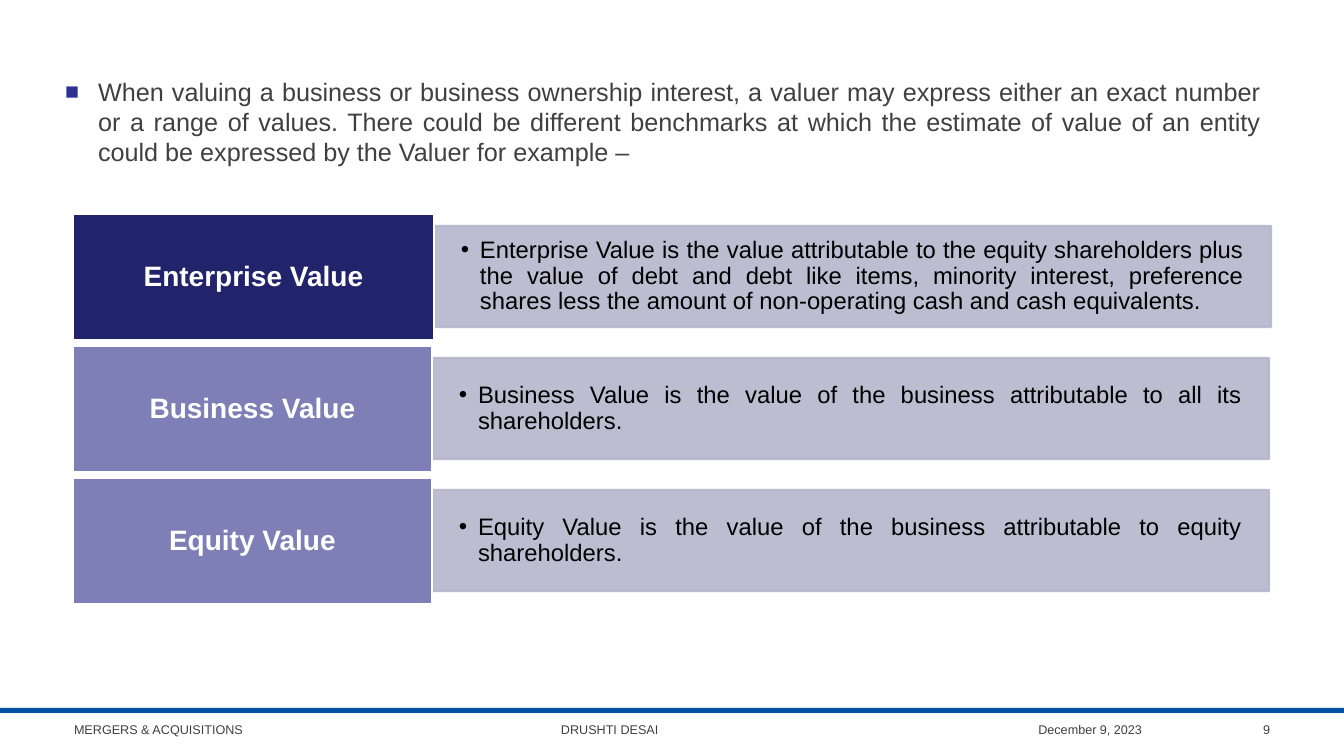
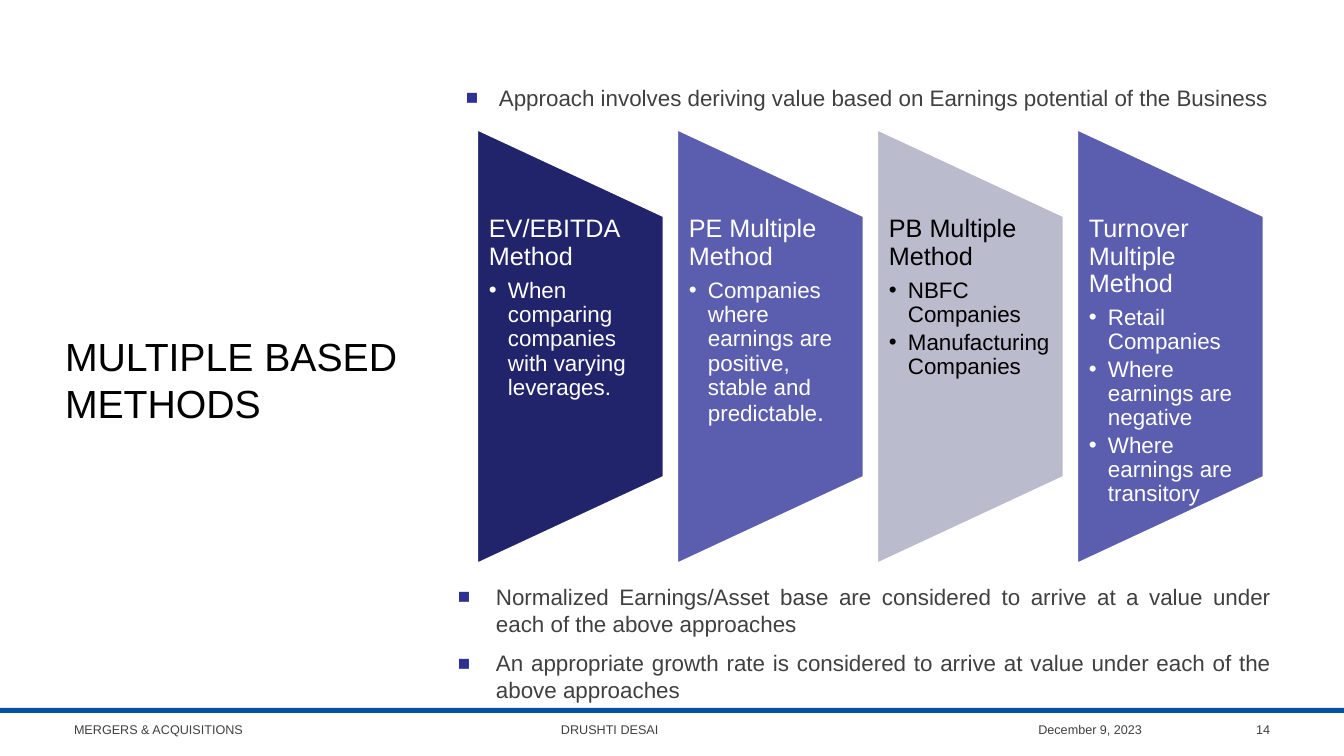
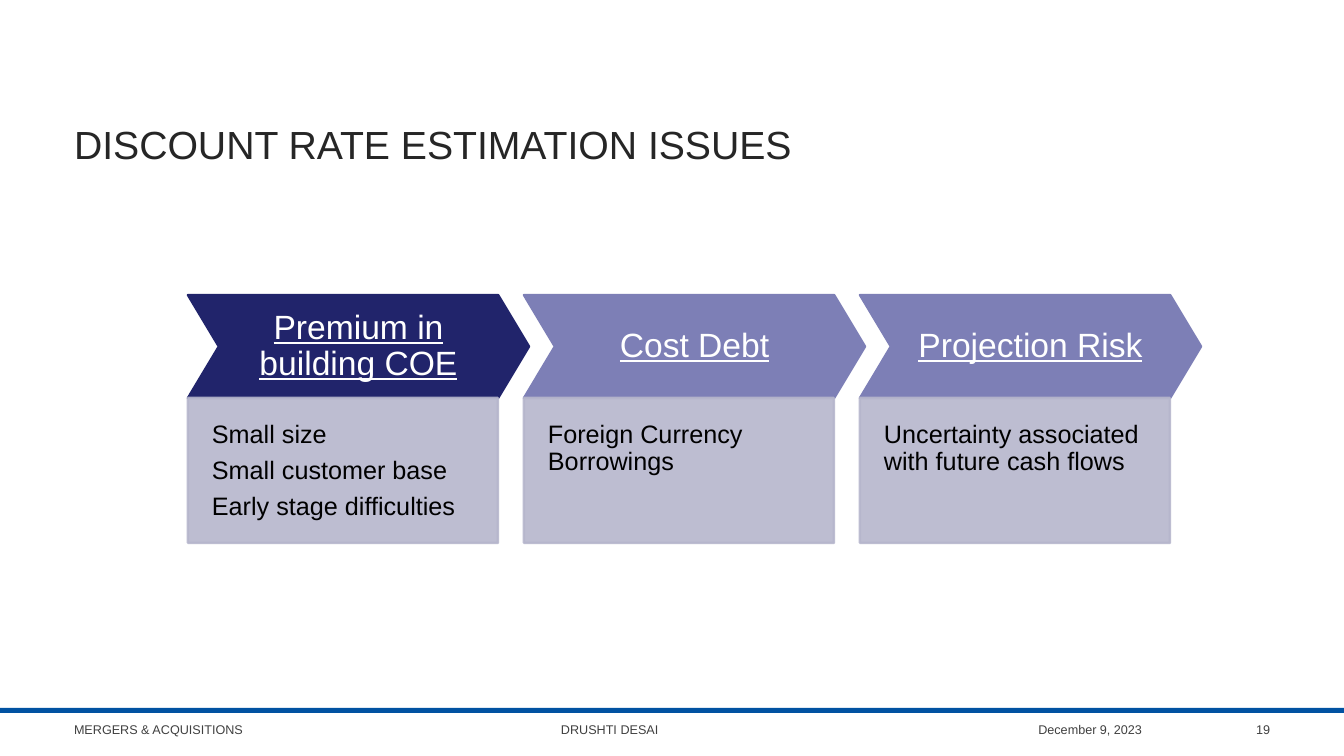
from dataclasses import dataclass, replace
from typing import NamedTuple

from lxml import etree
from pptx import Presentation
from pptx import util as u
from pptx.dml.color import RGBColor
from pptx.enum import shapes, text
from pptx.oxml.ns import qn

WIDE, HIGH = 1344, 756
SCALE = 12192000 / WIDE
FONT = "Arial"

WHITE = RGBColor(0xFF, 0xFF, 0xFF)
BLACK = RGBColor(0, 0, 0)
INK = RGBColor(0x26, 0x26, 0x26)
GREY = RGBColor(0x40, 0x40, 0x40)
BLUE = RGBColor(0x01, 0x52, 0xA2)
MARK = RGBColor(0x2D, 0x31, 0x90)
NAVY = RGBColor(0x21, 0x24, 0x6B)
MAUVE = RGBColor(0x7D, 0x7F, 0xB6)
IRIS = RGBColor(0x5B, 0x5E, 0xAE)
SILVER = RGBColor(0xBA, 0xBB, 0xCC)
PALE = RGBColor(0xB6, 0xB6, 0xCC)

LEFT, MID = text.PP_ALIGN.LEFT, text.PP_ALIGN.CENTER
RIGHT, FULL = text.PP_ALIGN.RIGHT, text.PP_ALIGN.JUSTIFY
TOP, MIDDLE = text.MSO_ANCHOR.TOP, text.MSO_ANCHOR.MIDDLE
RECT = shapes.MSO_SHAPE.RECTANGLE


class Box(NamedTuple):
    x: int
    y: int
    w: int
    h: int


class Inset(NamedTuple):
    left: int = 10
    top: int = 5
    right: int = 10
    low: int = 5


@dataclass(frozen=True)
class Look:
    size: int
    color: RGBColor
    align: text.PP_ALIGN = LEFT
    bold: bool = False
    under: bool = False
    lines: float = 1.0
    after: float = 0
    bullet: str = ""
    hang: int = 0
    mark: RGBColor | None = None


class Run(NamedTuple):
    words: str
    size: int | None = None


class Para(NamedTuple):
    look: Look
    runs: tuple[Run, ...]


class Row(NamedTuple):
    name: str
    note: str
    fill: RGBColor
    width: int


class Column(NamedTuple):
    name: str
    points: tuple[tuple[Run, ...], ...]
    fill: RGBColor
    color: RGBColor


class Step(NamedTuple):
    name: str
    points: tuple[str, ...]
    fill: RGBColor


BODY = Look(18, GREY, FULL, after=9.2, bullet="■", hang=33, mark=MARK)
LEAD = replace(BODY, size=16)
CLOSE = replace(LEAD, hang=38)
TITLE = Look(28, INK)
FOOT = Look(9, GREY)
LABEL = Look(20, WHITE, MID, bold=True, lines=0.9)
NOTE = Look(17, BLACK, FULL, lines=0.9, bullet="•", hang=19)
HEAD = Look(18, WHITE, lines=0.9, after=6.3)
POINT = Look(16, WHITE, lines=0.9, after=2.4, bullet="•", hang=19)
STEP = Look(24, WHITE, MID, under=True, lines=0.9)
ITEM = replace(HEAD, color=BLACK)


def px(n: int) -> u.Emu:
    return u.Emu(round(n * SCALE))


def para(look: Look, words: str) -> Para:
    return Para(look, (Run(words),))


def add_mark(p, look: Look) -> None:
    """Give a paragraph its bullet and hanging indent."""
    props = p._p.get_or_add_pPr()
    props.set("marL", str(px(look.hang)))
    props.set("indent", str(-px(look.hang)))
    if look.mark is not None:
        tint = etree.SubElement(props, qn("a:buClr"))
        etree.SubElement(tint, qn("a:srgbClr"), val=str(look.mark))
        etree.SubElement(props, qn("a:buSzPct"), val="92000")
    etree.SubElement(props, qn("a:buFont"), typeface=FONT)
    etree.SubElement(props, qn("a:buChar"), char=look.bullet)


def write(shape, paras: list[Para], anchor=TOP, inset: Inset = Inset()) -> None:
    frame = shape.text_frame
    frame.word_wrap = True
    frame.vertical_anchor = anchor
    frame.margin_left, frame.margin_top = px(inset.left), px(inset.top)
    frame.margin_right, frame.margin_bottom = px(inset.right), px(inset.low)
    for i, (look, runs) in enumerate(paras):
        p = frame.add_paragraph() if i else frame.paragraphs[0]
        if look.bullet:
            add_mark(p, look)
        p.alignment = look.align
        p.line_spacing = look.lines
        p.space_before = u.Pt(0)
        p.space_after = u.Pt(look.after)
        for part in runs:
            run = p.add_run()
            run.text = part.words
            font = run.font
            font.name, font.size = FONT, u.Pt(part.size or look.size)
            font.bold, font.underline = look.bold, look.under
            font.color.rgb = look.color


def add_text(slide, box: Box, paras: list[Para], anchor=TOP,
             inset: Inset = Inset()) -> None:
    write(slide.shapes.add_textbox(*map(px, box)), paras, anchor, inset)


def add_form(slide, kind, box: Box, fill: RGBColor,
             line: RGBColor | None = None):
    form = slide.shapes.add_shape(kind, *map(px, box))
    form.shadow.inherit = False
    form.fill.solid()
    form.fill.fore_color.rgb = fill
    if line is None:
        form.line.fill.background()
    else:
        form.line.color.rgb = line
        form.line.width = u.Pt(1.75)
    return form


def add_panel(slide, box: Box):
    """Draw a pale rectangle, 90 % opaque in fill and line."""
    panel = add_form(slide, RECT, box, PALE, PALE)
    for tint in panel._element.spPr.iter(qn("a:srgbClr")):
        etree.SubElement(tint, qn("a:alpha"), val="90000")
    return panel


def new_slide(deck, page: int):
    """Add a blank slide with the blue band and the footer."""
    slide = deck.slides.add_slide(deck.slide_layouts[6])
    add_form(slide, RECT, Box(0, 708, WIDE, 5), BLUE)
    for x, width, words, align in (
        (64, 400, "MERGERS & ACQUISITIONS", LEFT),
        (551, 276, "DRUSHTI DESAI", LEFT),
        (839, 313, "December 9, 2023", RIGHT),
        (1164, 116, str(page), RIGHT),
    ):
        add_text(slide, Box(x, 709, width, 40),
                 [para(replace(FOOT, align=align), words)], MIDDLE)
    return slide


def add_title(slide, box: Box, words: str, color: RGBColor = INK) -> None:
    add_text(slide, box, [para(replace(TITLE, color=color), words)], MIDDLE)


ROWS = (
    Row("Enterprise Value",
        "Enterprise Value is the value attributable to the equity shareholders "
        "plus the value of debt and debt like items, minority interest, "
        "preference shares less the amount of non-operating cash and cash "
        "equivalents.", NAVY, 361),
    Row("Business Value",
        "Business Value is the value of the business attributable to all its "
        "shareholders.", MAUVE, 359),
    Row("Equity Value",
        "Equity Value is the value of the business attributable to equity "
        "shareholders.", MAUVE, 359),
)

COLUMNS = (
    Column("EV/EBITDA Method",
           ((Run("When comparing companies with varying leverages."),),),
           NAVY, WHITE),
    Column("PE Multiple Method",
           ((Run("Companies where earnings are positive, stable and "
                 "predictable"), Run(".", 18)),),
           IRIS, WHITE),
    Column("PB Multiple Method",
           ((Run("NBFC Companies"),), (Run("Manufacturing Companies"),)),
           SILVER, BLACK),
    Column("Turnover Multiple Method",
           ((Run("Retail Companies"),), (Run("Where earnings are negative"),),
            (Run("Where earnings are transitory"),)),
           IRIS, WHITE),
)

STEPS = (
    Step("Premium in building COE",
         ("Small size", "Small customer base", "Early stage difficulties"),
         NAVY),
    Step("Cost Debt", ("Foreign Currency Borrowings",), MAUVE),
    Step("Projection Risk",
         ("Uncertainty associated with future cash flows",), MAUVE),
)


def draw_values(deck) -> None:
    slide = new_slide(deck, 9)
    add_text(slide, Box(55, 71, 1216, 110), [para(
        BODY, "When valuing a business or business ownership interest, a valuer "
        "may express either an exact number or a range of values. There could "
        "be different benchmarks at which the estimate of value of an entity "
        "could be expressed by the Valuer for example –")])
    left, top, pitch = 73, 214, 132
    for i, row in enumerate(ROWS):
        y = top + i * pitch
        panel = add_panel(slide, Box(left + row.width, y + 12, 837, 101))
        write(panel, [para(NOTE, row.note)], MIDDLE, Inset(27, 14, 27, 14))
        label = add_form(slide, RECT, Box(left, y, row.width, 126),
                         row.fill, WHITE)
        write(label, [para(LABEL, row.name)], MIDDLE, Inset(8, 4, 8, 4))


def draw_methods(deck) -> None:
    slide = new_slide(deck, 14)
    add_title(slide, Box(55, 120, 410, 519), "MULTIPLE BASED METHODS", BLACK)
    add_text(slide, Box(456, 79, 833, 36), [para(
        LEAD, "Approach involves deriving value based on Earnings potential of "
        "the Business")])
    left, top, pitch, wide, tall = 477, 129, 200, 187, 435
    turn = (tall - wide) // 2
    for i, col in enumerate(COLUMNS):
        x = left + i * pitch
        form = add_form(slide, shapes.MSO_SHAPE.FLOWCHART_MANUAL_OPERATION,
                        Box(x - turn, top + turn, tall, wide), col.fill, WHITE)
        form.rotation = 270
        point = replace(POINT, color=col.color)
        paras = [para(replace(HEAD, color=col.color), col.name)]
        paras += [Para(point, runs) for runs in col.points]
        add_text(slide, Box(x, top + 87, wide, 261), paras,
                 inset=Inset(12, 0, 12, 0))
    add_text(slide, Box(448, 578, 833, 128), [
        para(CLOSE, "Normalized Earnings/Asset base are considered to arrive at "
             "a value under each of the above approaches"),
        para(CLOSE, "An appropriate growth rate is considered to arrive at value "
             "under each of the above approaches")])


def draw_issues(deck) -> None:
    slide = new_slide(deck, 19)
    add_title(slide, Box(64, 78, 1216, 131), "DISCOUNT RATE ESTIMATION ISSUES")
    left, top, pitch, tall = 188, 295, 336, 103
    for i, step in enumerate(STEPS):
        x = left + i * pitch
        arrow = add_form(slide, shapes.MSO_SHAPE.CHEVRON,
                         Box(x, top, 341, tall), step.fill, step.fill)
        arrow.adjustments[0] = 0.3
        write(arrow, [para(STEP, step.name)], MIDDLE, Inset(13, 13, 13, 13))
        panel = add_panel(slide, Box(x, top + tall, 310, 145))
        write(panel, [para(ITEM, words) for words in step.points],
              inset=Inset(24, 24, 24, 49))


def main() -> None:
    deck = Presentation()
    deck.slide_width, deck.slide_height = px(WIDE), px(HIGH)
    draw_values(deck)
    draw_methods(deck)
    draw_issues(deck)
    deck.save("out.pptx")


if __name__ == "__main__":
    main()
